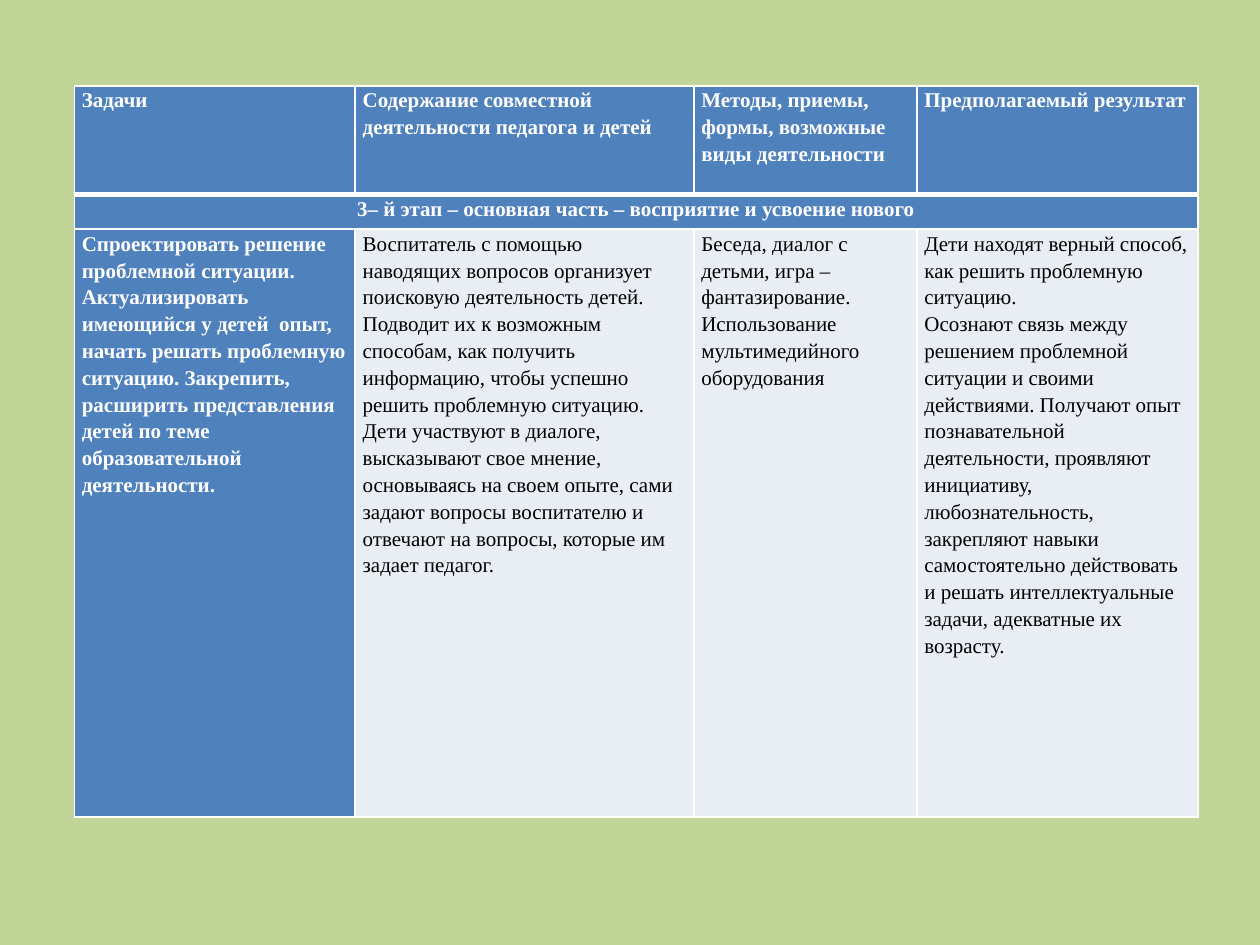
import dataclasses

import lxml.etree
import pptx
import pptx.dml.color
import pptx.enum.text
import pptx.oxml.ns
import pptx.util

Pt = pptx.util.Pt
qn = pptx.oxml.ns.qn
Align = pptx.enum.text.PP_ALIGN


@dataclasses.dataclass(frozen=True)
class Theme:
    background: str = "C1D598"
    accent: str = "4F81BD"
    pale: str = "E9EDF4"
    light: str = "FFFFFF"
    dark: str = "000000"
    font: str = "Times New Roman"
    size: float = 12
    line_spacing: float = 1.15
    thin: float = 1
    thick: float = 3


COLUMN_WIDTHS = [160.5, 193.5, 127.5, 160.5]
ROW_HEIGHTS = [62, 20, 336]
STAGE_ROW = 1
ROWS = [
    [
        ["Задачи"],
        ["Содержание совместной деятельности педагога и детей"],
        ["Методы, приемы, формы, возможные виды деятельности"],
        ["Предполагаемый результат"],
    ],
    [["3– й этап – основная часть – восприятие и усвоение нового"], [], [], []],
    [
        [
            "Спроектировать решение проблемной ситуации. Актуализировать "
            "имеющийся у детей  опыт, начать решать проблемную ситуацию. "
            "Закрепить, расширить представления детей по теме "
            "образовательной деятельности."
        ],
        [
            "Воспитатель с помощью наводящих вопросов организует поисковую "
            "деятельность детей. Подводит их к возможным способам, как получить "
            "информацию, чтобы успешно решить проблемную ситуацию.",
            "Дети участвуют в диалоге, высказывают свое мнение, основываясь на "
            "своем опыте, сами задают вопросы воспитателю и отвечают на вопросы, "
            "которые им задает педагог.",
        ],
        [
            "Беседа, диалог с детьми, игра – фантазирование.",
            "Использование мультимедийного оборудования",
        ],
        [
            "Дети находят верный способ, как решить проблемную ситуацию.",
            "Осознают связь между решением проблемной ситуации и своими "
            "действиями. Получают опыт познавательной деятельности, проявляют "
            "инициативу, любознательность, закрепляют навыки самостоятельно "
            "действовать и решать интеллектуальные задачи, адекватные их возрасту.",
        ],
    ],
]


def apply_format(target, values):
    for name, value in values.items():
        setattr(target, name, value)


def paint(fill, color):
    fill.solid()
    fill.fore_color.rgb = pptx.dml.color.RGBColor.from_string(color)


class SlideBuilder:
    """Draws styled elements on the current slide."""

    def __init__(self, slide, theme):
        self.slide = slide
        self.theme = theme

    def background(self):
        paint(self.slide.background.fill, self.theme.background)

    def borders(self, cell, widths):
        properties = cell._tc.get_or_add_tcPr()
        for side, width in widths.items():
            line = lxml.etree.SubElement(properties, qn(f"a:ln{side}"), w=str(Pt(width)))
            fill = lxml.etree.SubElement(line, qn("a:solidFill"))
            lxml.etree.SubElement(fill, qn("a:srgbClr"), val=self.theme.light)

    def text(self, cell, paragraphs, color, bold, alignment):
        frame = cell.text_frame
        frame.text = "\n".join(paragraphs)
        for paragraph in frame.paragraphs:
            apply_format(paragraph, {
                "alignment": alignment,
                "line_spacing": self.theme.line_spacing,
                "space_before": Pt(0),
                "space_after": Pt(0),
            })
            apply_format(paragraph.font, {
                "name": self.theme.font,
                "size": Pt(self.theme.size),
                "bold": bold,
            })
            for run in paragraph.runs:
                apply_format(run.font, {
                    "name": self.theme.font,
                    "size": Pt(self.theme.size),
                    "bold": bold,
                })
                paint(run.font.fill, color)

    def cell(self, cell, paragraphs, row, column):
        theme = self.theme
        heading = row <= STAGE_ROW or column == 0
        apply_format(cell, {
            "margin_left": Pt(4.3),
            "margin_right": Pt(4.3),
            "margin_top": Pt(0),
            "margin_bottom": Pt(0),
        })
        self.borders(cell, {
            "L": theme.thin,
            "R": theme.thin,
            "T": theme.thick if row == STAGE_ROW else theme.thin,
            "B": theme.thick if row == 0 else theme.thin,
        })
        paint(cell.fill, theme.accent if heading else theme.pale)
        self.text(
            cell,
            paragraphs,
            theme.light if heading else theme.dark,
            heading,
            Align.CENTER if row == STAGE_ROW else Align.LEFT,
        )

    def table(self, left, top, widths, heights, rows):
        shape = self.slide.shapes.add_table(
            len(heights), len(widths), Pt(left), Pt(top), Pt(sum(widths)), Pt(sum(heights))
        )
        table = shape.table
        apply_format(table, {"first_row": True, "first_col": True, "horz_banding": False})
        for column, width in zip(table.columns, widths):
            column.width = Pt(width)
        for row, height in zip(table.rows, heights):
            row.height = Pt(height)
        for row, contents in enumerate(rows):
            for column, paragraphs in enumerate(contents):
                self.cell(table.cell(row, column), paragraphs, row, column)
        table.cell(STAGE_ROW, 0).merge(table.cell(STAGE_ROW, len(widths) - 1))


def main():
    presentation = pptx.Presentation()
    apply_format(presentation, {"slide_width": Pt(720), "slide_height": Pt(540)})
    slide = presentation.slides.add_slide(presentation.slide_layouts[6])
    builder = SlideBuilder(slide, Theme())
    builder.background()
    builder.table(42.5, 49, COLUMN_WIDTHS, ROW_HEIGHTS, ROWS)
    presentation.save("out.pptx")


if __name__ == "__main__":
    main()
